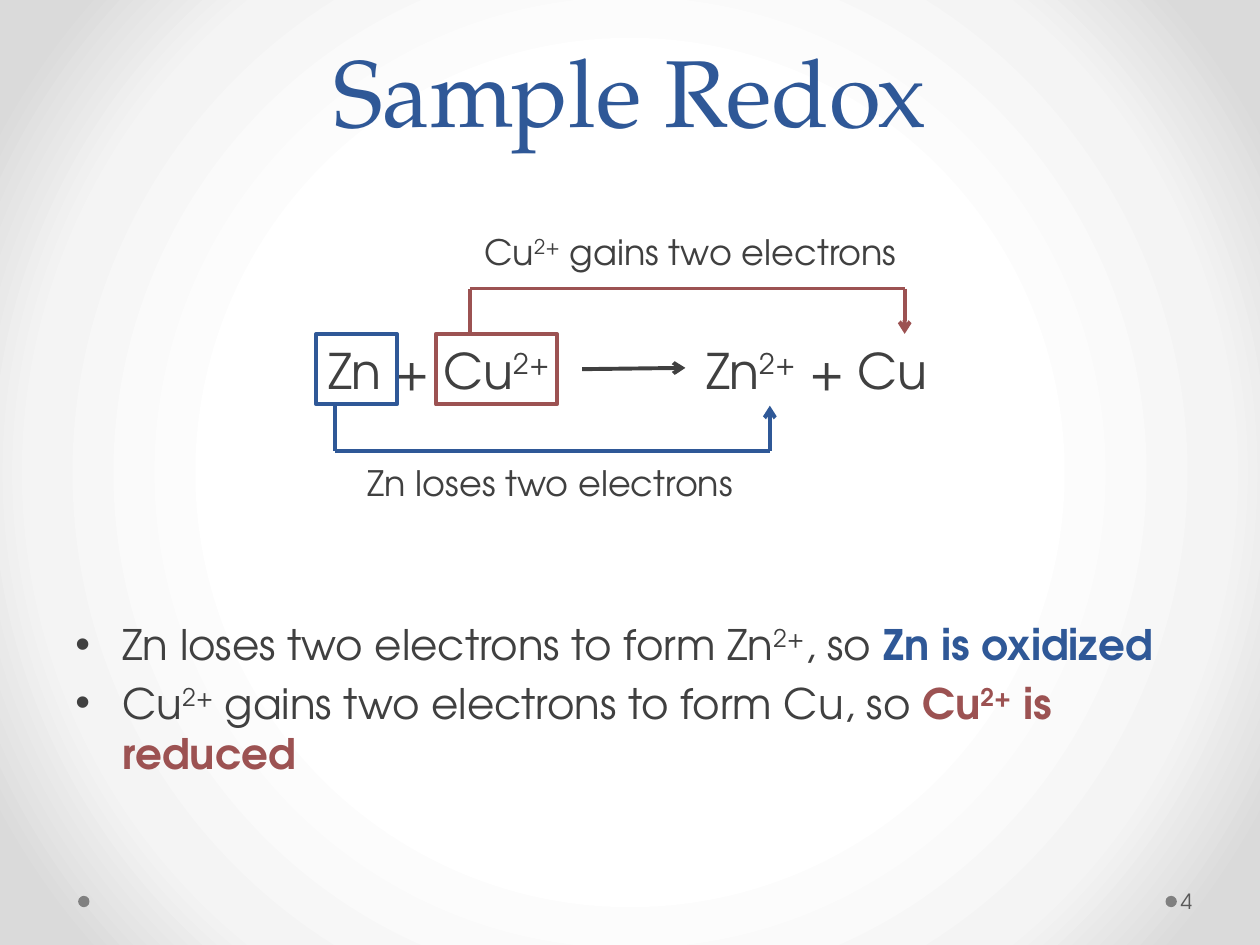
"""Build the Sample Redox slide."""
import itertools
from dataclasses import dataclass

import pptx
import pptx.dml.color
import pptx.enum.shapes
import pptx.enum.text
import pptx.oxml
import pptx.oxml.ns
import pptx.util
from lxml import etree

Pt = pptx.util.Pt
ALIGN = pptx.enum.text.PP_ALIGN
ANCHOR = pptx.enum.text.MSO_ANCHOR
SHAPE = pptx.enum.shapes.MSO_SHAPE
qn = pptx.oxml.ns.qn


@dataclass(frozen=True)
class Theme:
    blue: str = "2F5897"
    red: str = "9C5252"
    ink: str = "404040"
    number: str = "595959"
    dot: str = "808080"
    backdrop: tuple = ((50, "FFFFFF"), (76, "F4F4F4"), (92, "DADADA"))
    heading_font: str = "TeX Gyre Pagella"
    body_font: str = "TeX Gyre Adventor"
    title_size: float = 54
    equation_size: float = 28
    body_size: float = 24
    label_size: float = 20
    number_size: float = 12
    stroke: float = 2.25


class SlideBuilder:
    def __init__(self, deck, theme):
        self.theme = theme
        self.page = deck.slides.add_slide(deck.slide_layouts[6])

    def color(self, value):
        return pptx.dml.color.RGBColor.from_string(value)

    def background(self):
        self.page.background.fill.gradient()
        gradient = next(self.page.element.iter(qn("a:gradFill")))
        stops = "".join(
            f'<a:gs pos="{pos * 1000}"><a:srgbClr val="{value}"/></a:gs>'
            for pos, value in self.theme.backdrop)
        radial = pptx.oxml.parse_xml(
            f'<a:gradFill {pptx.oxml.ns.nsdecls("a")} rotWithShape="1">'
            f'<a:gsLst>{stops}</a:gsLst><a:path path="circle">'
            '<a:fillToRect l="50000" t="50000" r="50000" b="50000"/>'
            '</a:path></a:gradFill>')
        gradient.getparent().replace(gradient, radial)

    def shape(self, kind, left, top, width, height, fill=None, line=None):
        shape = self.page.shapes.add_shape(kind, Pt(left), Pt(top), Pt(width), Pt(height))
        shape.shadow.inherit = False
        for paint, value in ((shape.fill, fill), (shape.line.fill, line)):
            if value:
                paint.solid()
                paint.fore_color.rgb = self.color(value)
            else:
                paint.background()
        if line:
            shape.line.width = Pt(self.theme.stroke)

    def text(self, left, top, width, height, paras, size, color=None, font=None,
             align=ALIGN.CENTER, anchor=ANCHOR.TOP, line_spacing=None, bullet=False,
             tabs=(), margins=(7.2, 3.6, 7.2, 3.6)):
        box = self.page.shapes.add_textbox(Pt(left), Pt(top), Pt(width), Pt(height))
        frame = box.text_frame
        frame.word_wrap = True
        frame.vertical_anchor = anchor
        (frame.margin_left, frame.margin_top,
         frame.margin_right, frame.margin_bottom) = map(Pt, margins)
        for index, spans in enumerate(paras):
            para = frame.add_paragraph() if index else frame.paragraphs[0]
            para.alignment = align
            if line_spacing:
                para.line_spacing = Pt(line_spacing)
            if bullet:
                self.bullet(para)
            if tabs:
                self.tab_stops(para, tabs)
            for words, *accent in spans:
                self.span(para, words, size, color or self.theme.ink,
                          font or self.theme.body_font, *accent)

    def bullet(self, para):
        para.space_before = Pt(4.8)
        props = para._p.get_or_add_pPr()
        props.set("marL", str(Pt(27)))
        props.set("indent", str(Pt(-27)))
        etree.SubElement(props, qn("a:buFont")).set("typeface", "Arial")
        etree.SubElement(props, qn("a:buChar")).set("char", "•")

    def tab_stops(self, para, tabs):
        stops = etree.SubElement(para._p.get_or_add_pPr(), qn("a:tabLst"))
        for position in tabs:
            stop = etree.SubElement(stops, qn("a:tab"))
            stop.set("pos", str(Pt(position)))
            stop.set("algn", "l")

    def span(self, para, words, size, color, font, accent=None):
        span = para.add_run()
        span.text = words
        span.font.size = Pt(size)
        span.font.name = font
        span.font.bold = bool(accent)
        span.font.color.rgb = self.color(accent or color)
        if words == "2+":
            span.font._element.set("baseline", "30000")

    def route(self, points, color):
        legs = list(itertools.pairwise(points))
        for index, (start, end) in enumerate(legs):
            leg = self.page.shapes.add_connector(
                pptx.enum.shapes.MSO_CONNECTOR.STRAIGHT, *map(Pt, start + end))
            leg.line.color.rgb = self.color(color)
            leg.line.width = Pt(self.theme.stroke)
            if index == len(legs) - 1:
                tail = etree.SubElement(leg.line._get_or_add_ln(), qn("a:tailEnd"))
                tail.set("type", "arrow")
            etree.SubElement(leg._element.spPr, qn("a:effectLst"))

    def bracket(self, left, base, level, color):
        right = left + 248.4
        self.route([(left, base), (left, level), (right, level), (right, base)], color)


def main():
    deck = pptx.Presentation()
    deck.slide_width, deck.slide_height = Pt(720), Pt(540)
    theme = Theme()
    slide = SlideBuilder(deck, theme)
    slide.background()
    for left in (666, 44.64):
        slide.shape(SHAPE.OVAL, left, 511.92, 6.48, 6.48, fill=theme.dot)

    slide.text(36, 0, 648, 87.12, [[("Sample Redox",)]], theme.title_size,
               color=theme.blue, font=theme.heading_font, anchor=ANCHOR.BOTTOM,
               line_spacing=58)
    slide.text(36, 349.92, 648, 110.16, [
        [("Zn loses two electrons to form Zn",), ("2+",), (", so ",),
         ("Zn is oxidized", theme.blue)],
        [("Cu",), ("2+",), (" gains two electrons to form Cu, so ",),
         ("Cu", theme.red), ("2+", theme.red), (" is reduced", theme.red)],
    ], theme.body_size, align=ALIGN.LEFT, bullet=True)
    slide.text(672.48, 500.4, 43.92, 28.8, [[("4",)]], theme.number_size,
               color=theme.number, align=ALIGN.LEFT, anchor=ANCHOR.MIDDLE,
               margins=(2.16, 3.6, 3.6, 3.6))

    slide.route([(332.64, 210.96), (391.68, 210.24)], theme.ink)
    slide.text(136.8, 190.8, 447.84, 48.24,
               [[("Zn + Cu",), ("2+",), ("\t\tZn",), ("2+",), (" + Cu",)]],
               theme.equation_size, align=ALIGN.LEFT, tabs=(172, 216),
               margins=(50.7, 3.6, 7.2, 3.6))
    slide.bracket(268.56, 190.8, 164.88, theme.red)
    slide.text(248.4, 128.16, 292.32, 36.72,
               [[("Cu",), ("2+",), (" gains two electrons",)]], theme.label_size)
    slide.bracket(191.52, 231.84, 257.76, theme.blue)
    slide.text(168.48, 259.92, 292.32, 36.72,
               [[("Zn loses two electrons",)]], theme.label_size)
    for left, width, color in ((180.72, 46.08, theme.blue), (249.12, 69.12, theme.red)):
        slide.shape(SHAPE.RECTANGLE, left, 190.8, width, 40.32, line=color)

    deck.save("out.pptx")


if __name__ == "__main__":
    main()
